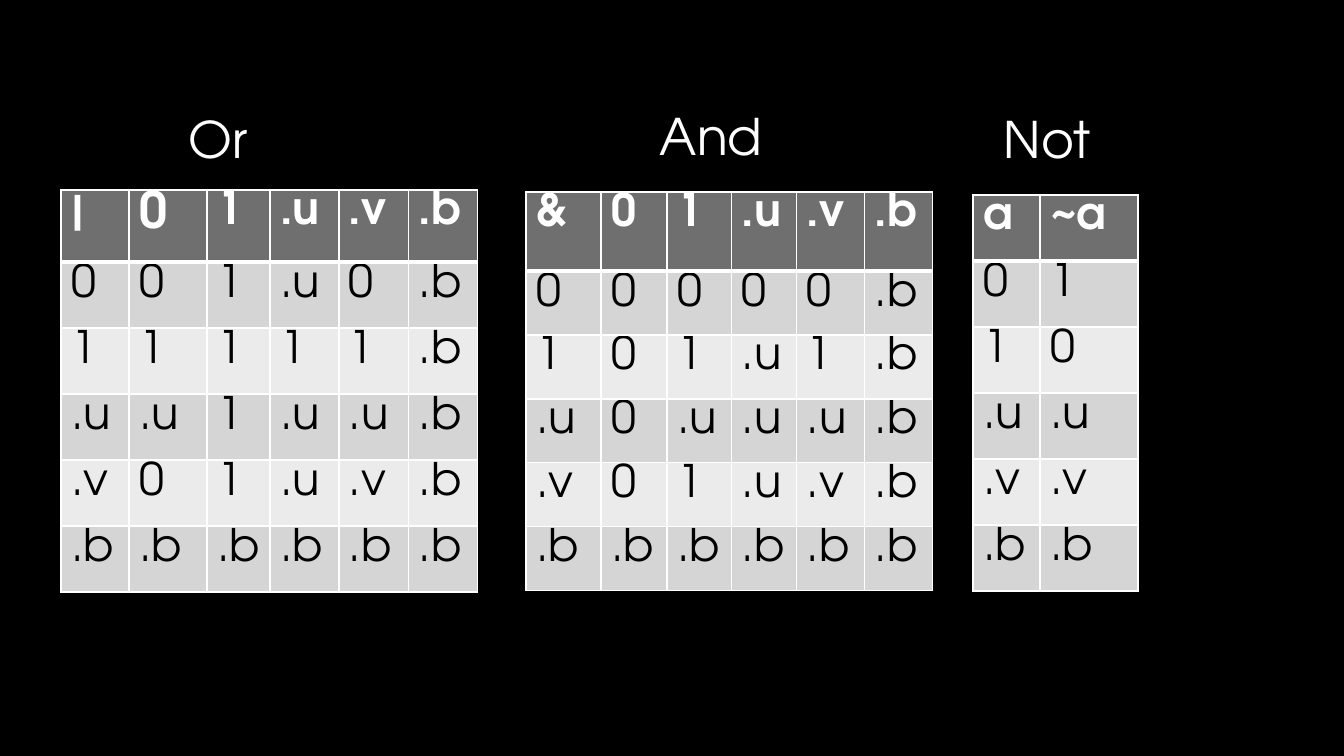
from dataclasses import dataclass

from lxml import etree
from pptx import Presentation
from pptx.dml.color import RGBColor
from pptx.enum.text import MSO_AUTO_SIZE
from pptx.oxml.ns import qn
from pptx.util import Inches, Pt

GROW = MSO_AUTO_SIZE.SHAPE_TO_FIT_TEXT
PX_PER_INCH = 100.8
BLANK_LAYOUT = 6
CELL_RIGHT_MARGIN = 2


@dataclass(frozen=True)
class Theme:
    font: str = "TeX Gyre Adventor"
    background: str = "000000"
    light_text: str = "FFFFFF"
    dark_text: str = "000000"
    border: str = "FFFFFF"
    header_fill: str = "6F6F6F"
    band_fills: tuple = ("D5D5D5", "EBEBEB")
    caption_size: int = 36
    cell_size: int = 32
    line_spacing: float = 0.9
    thin: int = 1
    thick: int = 3


THEME = Theme()

OR_ROWS = [
    "| 0 1 .u .v .b",
    "0 0 1 .u 0 .b",
    "1 1 1 1 1 .b",
    ".u .u 1 .u .u .b",
    ".v 0 1 .u .v .b",
    ".b .b .b .b .b .b",
]
AND_ROWS = [
    "& 0 1 .u .v .b",
    "0 0 0 0 0 .b",
    "1 0 1 .u 1 .b",
    ".u 0 .u .u .u .b",
    ".v 0 1 .u .v .b",
    ".b .b .b .b .b .b",
]
NOT_ROWS = ["a ~a", "0 1", "1 0", ".u .u", ".v .v", ".b .b"]


def px(length):
    return Inches(length / PX_PER_INCH)


def style_text(paragraph, size, color, bold=False):
    font = paragraph.font
    font.name = THEME.font
    font.size = Pt(size)
    font.bold = bold
    font.color.rgb = RGBColor.from_string(color)


def add_border(cell, side, width):
    properties = cell._tc.get_or_add_tcPr()
    line = etree.SubElement(properties, qn(f"a:ln{side}"), w=str(Pt(width)))
    fill = etree.SubElement(line, qn("a:solidFill"))
    etree.SubElement(fill, qn("a:srgbClr"), val=THEME.border)


def format_cell(cell, value, row_index, size):
    is_header = row_index == 0
    widths = {
        "L": THEME.thin,
        "R": THEME.thin,
        "T": THEME.thick if row_index == 1 else THEME.thin,
        "B": THEME.thick if is_header else THEME.thin,
    }
    for side, width in widths.items():
        add_border(cell, side, width)
    fill = THEME.header_fill if is_header else THEME.band_fills[(row_index - 1) % 2]
    cell.fill.solid()
    cell.fill.fore_color.rgb = RGBColor.from_string(fill)
    cell.margin_right = px(CELL_RIGHT_MARGIN)
    cell.text = value
    paragraph = cell.text_frame.paragraphs[0]
    paragraph.line_spacing = THEME.line_spacing
    color = THEME.light_text if is_header else THEME.dark_text
    style_text(paragraph, size, color, bold=is_header)


def add_caption(slide, caption, box):
    frame = slide.shapes.add_textbox(*map(px, box)).text_frame
    frame.word_wrap = True
    frame.auto_size = GROW
    frame.text = caption
    style_text(frame.paragraphs[0], THEME.caption_size, THEME.light_text)


def add_truth_table(slide, rows, origin, column_widths, header_height, row_height, larger=()):
    left, top = origin
    heights = [header_height] + [row_height] * (len(rows) - 1)
    truth_table = slide.shapes.add_table(
        len(rows), len(column_widths),
        px(left), px(top), px(sum(column_widths)), px(sum(heights)),
    ).table
    for column, width in zip(truth_table.columns, column_widths):
        column.width = px(width)
    for row_index, (values, height) in enumerate(zip(rows, heights)):
        truth_table.rows[row_index].height = px(height)
        for column_index, value in enumerate(values.split()):
            position = (row_index, column_index)
            size = THEME.caption_size if position in larger else THEME.cell_size
            format_cell(truth_table.cell(*position), value, row_index, size)


def build_logic_slide(presentation):
    slide = presentation.slides.add_slide(presentation.slide_layouts[BLANK_LAYOUT])
    background = slide.background.fill
    background.solid()
    background.fore_color.rgb = RGBColor.from_string(THEME.background)

    add_truth_table(slide, OR_ROWS, (61, 190), (68, 78, 63, 69, 70, 69), 72, 66, {(0, 1)})
    add_truth_table(slide, AND_ROWS, (526, 192), (75, 66, 65, 65, 68, 68), 79, 64)
    add_caption(slide, "Or", (179, 103, 115, 72))
    add_caption(slide, "And", (650, 100, 134, 72))
    add_truth_table(slide, NOT_ROWS, (973, 195), (67, 98), 66, 66)
    add_caption(slide, "Not", (994, 103, 115, 72))


def main():
    presentation = Presentation()
    presentation.slide_width = px(1344)
    presentation.slide_height = px(756)
    build_logic_slide(presentation)
    presentation.save("out.pptx")


if __name__ == "__main__":
    main()
